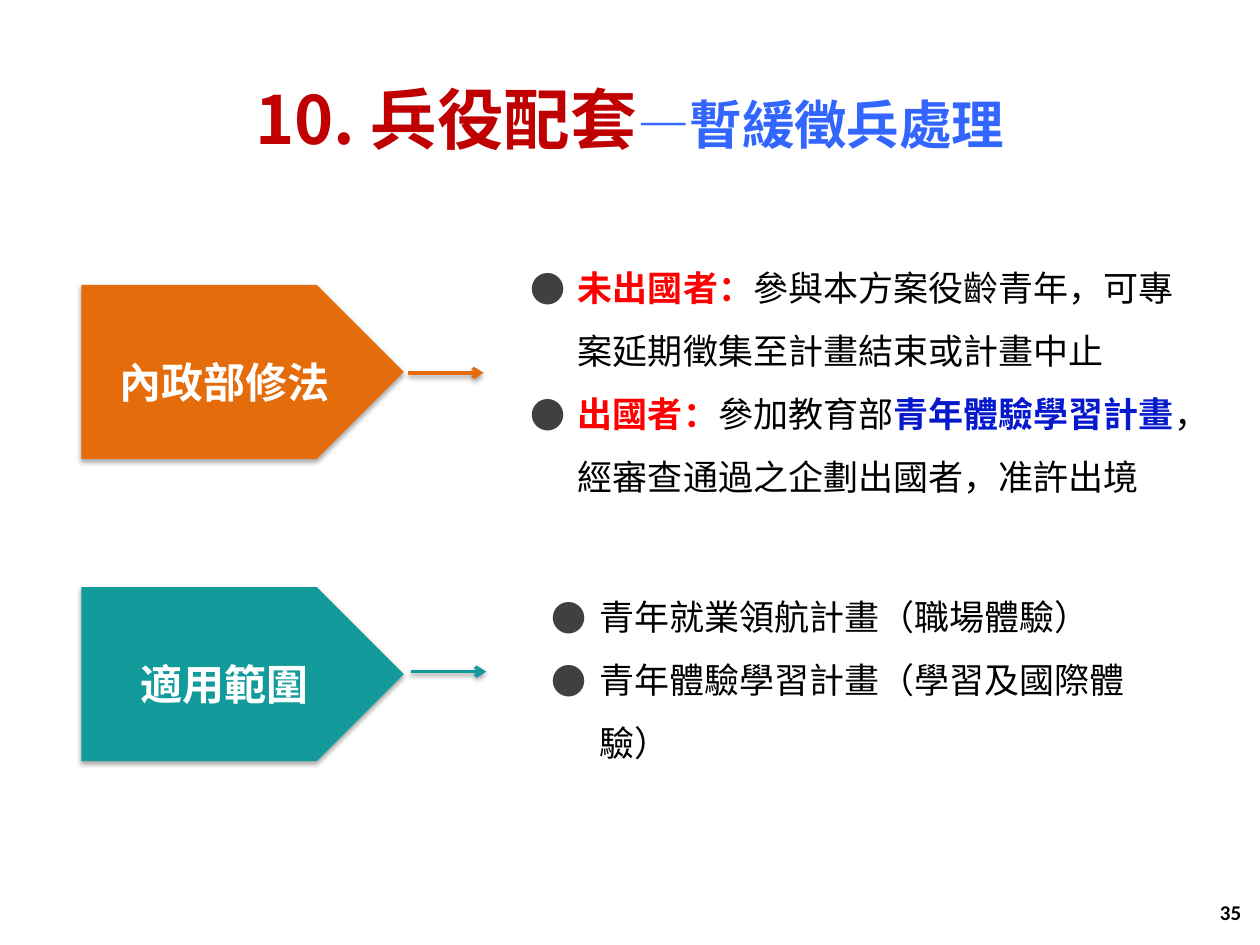
from lxml import etree
from pptx import Presentation
from pptx.dml.color import RGBColor
from pptx.enum import shapes, text
from pptx.oxml import parse_xml
from pptx.oxml.ns import nsdecls, qn
from pptx.util import Pt

CJK = "Noto Sans CJK SC"
WHITE = RGBColor(0xFF, 0xFF, 0xFF)
BLACK = RGBColor(0, 0, 0)
DARK_RED = RGBColor(0xC0, 0, 0)
SKY_BLUE = RGBColor(0x33, 0x66, 0xFF)
RED = RGBColor(0xFF, 0, 0)
BLUE = RGBColor(0x06, 0x19, 0xCC)
ORANGE = RGBColor(0xE4, 0x6C, 0x0A)
TEAL = RGBColor(0x13, 0x9B, 0x9B)
BULLET = RGBColor(0x40, 0x40, 0x40)


def add_text(p, value, *, size=20, color=BLACK, bold=False, font=CJK):
    r = p.add_run()
    r.text = value
    r.font.size, r.font.bold, r.font.name = Pt(size), bold, font
    r.font.color.rgb = color
    ea = etree.SubElement(r.font._element, qn("a:ea"))
    ea.set("typeface", font)
    r.font._element.find(qn("a:latin")).addnext(ea)


def place(sp, left, top, width, height):
    sp.left, sp.top, sp.width, sp.height = (
        Pt(v) for v in (left, top, width, height))


def format_frame(tf, anchor=text.MSO_ANCHOR.MIDDLE):
    tf.word_wrap = True
    tf.auto_size = text.MSO_AUTO_SIZE.NONE
    tf.vertical_anchor = anchor


def add_shadow(sp, distance, alpha):
    for old in sp._element.spPr.findall(qn("a:effectLst")):
        sp._element.spPr.remove(old)
    sp._element.spPr.append(parse_xml(
        f'<a:effectLst {nsdecls("a")}><a:outerShdw blurRad="{Pt(3.1)}" '
        f'dist="{Pt(distance)}" dir="5400000" rotWithShape="0">'
        f'<a:srgbClr val="000000"><a:alpha val="{alpha * 1000}"/></a:srgbClr>'
        '</a:outerShdw></a:effectLst>'))


def add_bullet(p, indent):
    pPr = p._p.get_or_add_pPr()
    pPr.set("marL", str(Pt(indent)))
    pPr.set("indent", str(-Pt(indent)))
    for xml in (f'<a:buClr {nsdecls("a")}><a:srgbClr val="{BULLET}"/></a:buClr>',
                f'<a:buFont {nsdecls("a")} typeface="{CJK}"/>',
                f'<a:buChar {nsdecls("a")} char="●"/>'):
        pPr.append(parse_xml(xml))


def fill_title(sp, box):
    place(sp, *box)
    format_frame(sp.text_frame)
    p = sp.text_frame.paragraphs[0]
    p.alignment = text.PP_ALIGN.CENTER
    add_text(p, "10. 兵役配套", size=38, color=DARK_RED, bold=True)
    add_text(p, "—暫緩徵兵處理", size=30, color=SKY_BLUE, bold=True)


def fill_list(sp, box, items, inset=7.2):
    place(sp, *box)
    tf = sp.text_frame
    format_frame(tf)
    tf.margin_left = Pt(inset)
    for i, runs in enumerate(items):
        p = tf.add_paragraph() if i else tf.paragraphs[0]
        add_bullet(p, 27)
        p.line_spacing = 1.5
        p.space_before = Pt(0)
        for value, color in runs:
            add_text(p, value, color=color, bold=color != BLACK)


def add_tag(s, box, label, color, arrow_dx, arrow_dy):
    left, top, width, height = box
    sp = s.shapes.add_shape(shapes.MSO_SHAPE.PENTAGON, *(Pt(v) for v in box))
    sp.fill.solid()
    sp.fill.fore_color.rgb = color
    sp.line.fill.background()
    add_shadow(sp, 1.8, 35)

    tb = s.shapes.add_textbox(Pt(left), Pt(top + 26), Pt(width - 21), Pt(48))
    format_frame(tb.text_frame, text.MSO_ANCHOR.TOP)
    p = tb.text_frame.paragraphs[0]
    p.alignment = text.PP_ALIGN.CENTER
    p.line_spacing = 1.4
    add_text(p, label, size=24, color=WHITE, bold=True)

    x, y = left + width + arrow_dx, top + arrow_dy
    cx = s.shapes.add_connector(
        shapes.MSO_CONNECTOR.STRAIGHT, Pt(x), Pt(y), Pt(x + 43), Pt(y))
    cx.line.color.rgb = color
    cx.line.width = Pt(2)
    etree.SubElement(cx.line._get_or_add_ln(), qn("a:tailEnd")).set("type", "arrow")
    add_shadow(cx, 1.6, 38)


def add_page_number(s, box, number):
    tb = s.shapes.add_textbox(*(Pt(v) for v in box))
    format_frame(tb.text_frame)
    p = tb.text_frame.paragraphs[0]
    p.alignment = text.PP_ALIGN.RIGHT
    add_text(p, number, size=12, bold=True, font="Calibri")


def main():
    prs = Presentation()
    prs.slide_width, prs.slide_height = Pt(720), Pt(540)
    s = prs.slides.add_slide(prs.slide_layouts[3])
    title, amendment, scope = s.placeholders

    fill_title(title, (0, 44.6, 720, 45.4))
    fill_list(amendment, (296, 138.2, 386, 148.3), [
        [("未出國者：", RED),
         ("參與本方案役齡青年，可專案延期徵集至計畫結束或計畫中止", BLACK)],
        [("出國者：", RED), ("參加教育部", BLACK), ("青年體驗學習計畫", BLUE),
         ("，經審查通過之企劃出國者，准許出境", BLACK)],
    ])
    fill_list(scope, (293, 344.9, 373, 74.9), [
        [("青年就業領航計畫（職場體驗）", BLACK)],
        [("青年體驗學習計畫（學習及國際體驗）", BLACK)],
    ], inset=22.3)
    add_tag(s, (46.5, 162.8, 184.3, 99.4), "內政部修法", ORANGE, 2.5, 50.3)
    add_tag(s, (46.5, 335.5, 184.3, 99.4), "適用範圍", TEAL, 4, 48.3)
    add_page_number(s, (548.6, 506.9, 167.8, 28.8), "35")
    prs.save("out.pptx")


if __name__ == "__main__":
    main()
